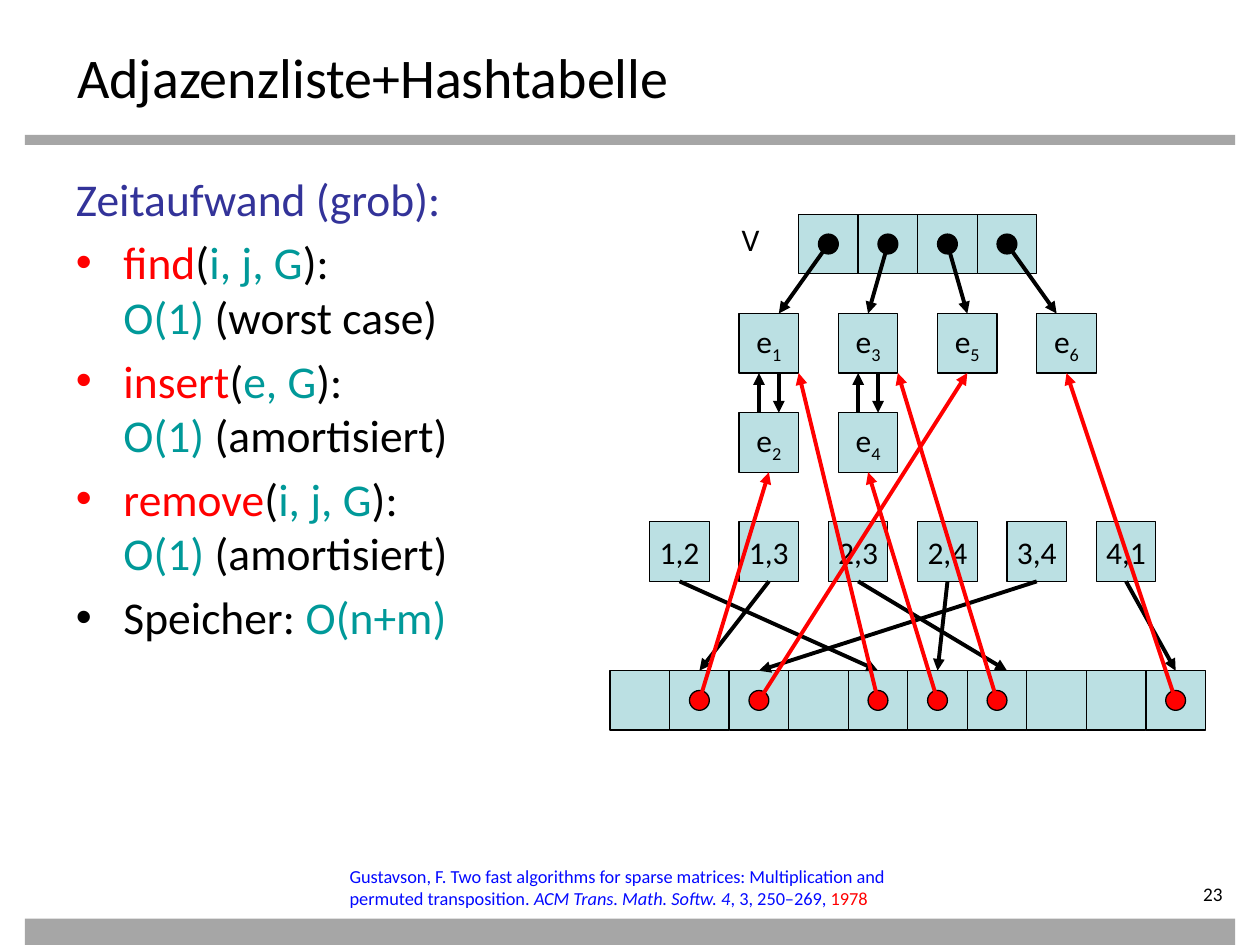
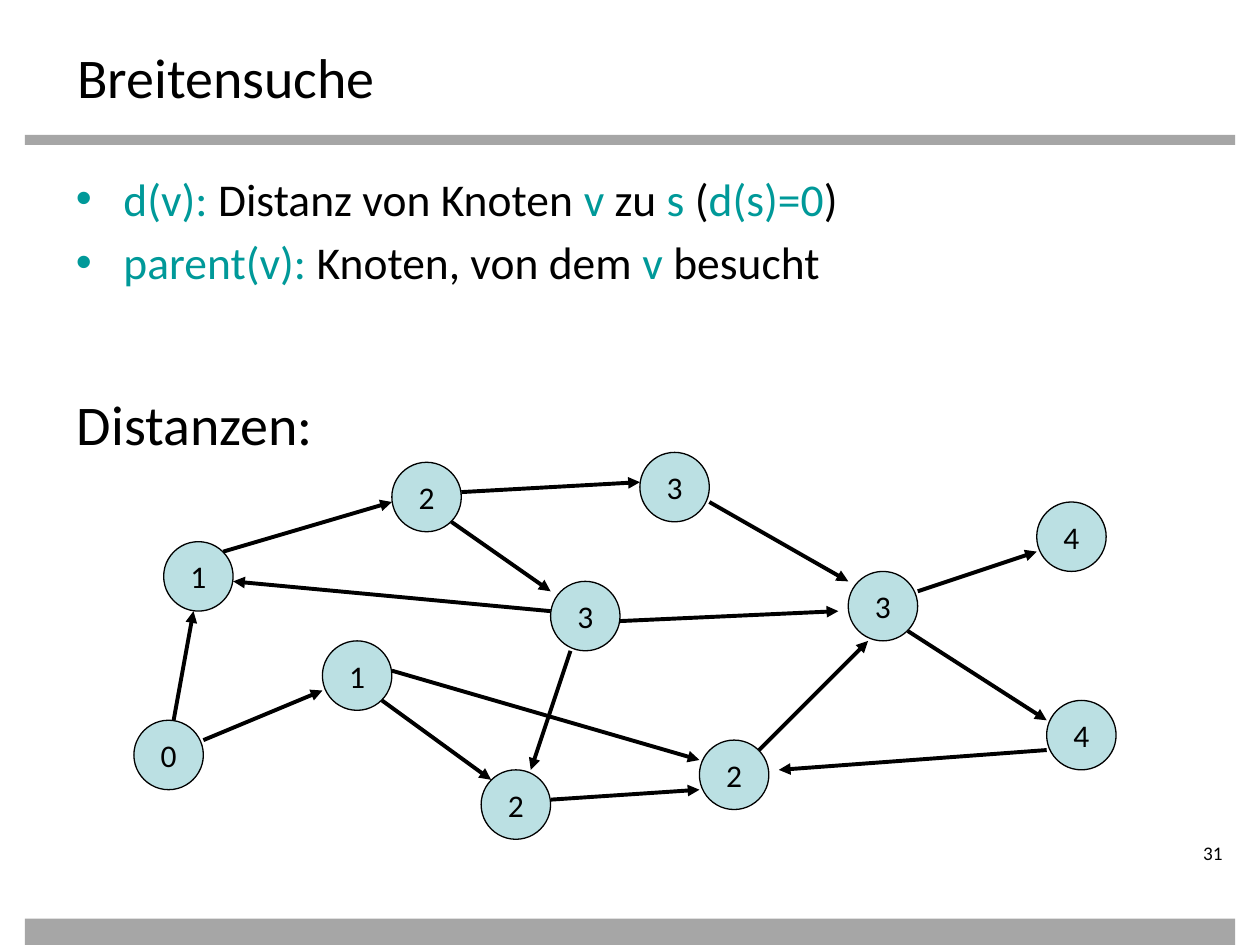
"""Build two lecture slides on graph storage and breadth-first search."""
from typing import NamedTuple, Optional, Sequence

from lxml import etree
from pptx import Presentation
from pptx import util as u
from pptx.dml.color import RGBColor
from pptx.enum import shapes, text
from pptx.oxml import ns

PX = 7200
FONT = "Calibri"
BLACK = RGBColor(0x00, 0x00, 0x00)
GREY = RGBColor(0xA6, 0xA6, 0xA6)
PALE = RGBColor(0xBB, 0xE0, 0xE3)
RED = RGBColor(0xFF, 0x00, 0x00)
TEAL = RGBColor(0x00, 0x99, 0x99)
NAVY = RGBColor(0x33, 0x33, 0x99)
BLUE = RGBColor(0x04, 0x09, 0xFF)

RECT = shapes.MSO_SHAPE.RECTANGLE
OVAL = shapes.MSO_SHAPE.OVAL
LEFT = text.PP_ALIGN.LEFT
MID = text.PP_ALIGN.CENTER
RIGHT = text.PP_ALIGN.RIGHT
TOP, BOTTOM = 0, 2

CELL, DOT, NODE, HANG = 60, 20, 70, 48


class Box(NamedTuple):
    x: int
    y: int
    w: int
    h: int

    def emu(self) -> list:
        return [u.Emu(v * PX) for v in self]


class Run(NamedTuple):
    text: str
    ink: Optional[RGBColor] = None
    italic: bool = False
    sub: bool = False


class Item(NamedTuple):
    runs: Sequence[Run]
    mark: bool = True


class Edge(NamedTuple):
    x1: int
    y1: int
    x2: int
    y2: int


class Key(NamedTuple):
    label: str
    slot: int
    shift: int = 0


class Link(NamedTuple):
    slot: int
    name: str
    corner: bool = False


class Vert(NamedTuple):
    label: str
    x: int
    y: int


BANDS = (Box(25, 136, 1220, 10), Box(25, 926, 1220, 27))
TITLE = Box(65, 36, 1143, 70)
BODY = Box(64, 166, 1143, 690)


def call(name: str, args: str, cost: str, note: str) -> Item:
    """Describe one operation with its running time."""
    return Item((Run(name, RED), Run("("), Run(args, TEAL), Run("):"),
                 Run("\n"), Run(cost + " ", TEAL), Run(f"({note})")))


COSTS = (
    Item((Run("Zeitaufwand (grob):", NAVY),), False),
    call("find", "i, j, G", "O(1)", "worst case"),
    call("insert", "e, G", "O(1)", "amortisiert"),
    call("remove", "i, j, G", "O(1)", "amortisiert"),
    Item((Run("Speicher:"), Run(" O(n+m)", TEAL))),
)
TERMS = (
    Item((Run("d(v):", TEAL), Run(" Distanz von Knoten "), Run("v", TEAL),
          Run(" zu "), Run("s ", TEAL), Run("("), Run("d(s)=0", TEAL),
          Run(")"))),
    Item((Run("parent(v):", TEAL), Run(" Knoten, von dem "),
          Run("v", TEAL), Run(" besucht"))),
)
CITE = (
    Run("Gustavson, F. Two fast algorithms for sparse matrices: "
        "Multiplication and permuted transposition. "),
    Run("ACM Trans. Math. Softw. 4", italic=True),
    Run(", 3, 250–269, "),
    Run("1978", RED),
)

LISTS = (("1", "2"), ("3", "4"), ("5",), ("6",))
HEADS = (785, 875, 975, 1065)
KEYS = (Key("1,2", 4), Key("1,3", 1), Key("2,3", 6, 10),
        Key("2,4", 5), Key("3,4", 2), Key("4,1", 9))
LINKS = (Link(1, "2"), Link(2, "5"), Link(4, "1", True),
         Link(5, "4"), Link(6, "3", True), Link(9, "6"))

VERTS = (
    Vert("0", 135, 726), Vert("1", 165, 546), Vert("1", 325, 646),
    Vert("2", 485, 776), Vert("3", 555, 586), Vert("2", 705, 746),
    Vert("2", 395, 466), Vert("3", 645, 456), Vert("3", 855, 576),
    Vert("4", 1045, 506), Vert("4", 1055, 706),
)
EDGES = (
    Edge(175, 726, 195, 616), Edge(205, 746, 325, 696),
    Edge(225, 556, 395, 506), Edge(385, 706, 495, 786),
    Edge(395, 676, 705, 766), Edge(555, 806, 705, 796),
    Edge(455, 526, 555, 596), Edge(465, 496, 645, 486),
    Edge(625, 626, 845, 616), Edge(765, 756, 875, 646),
    Edge(715, 506, 855, 586), Edge(575, 656, 535, 776),
    Edge(925, 596, 1045, 556), Edge(915, 636, 1055, 726),
    Edge(555, 616, 235, 586), Edge(1055, 756, 785, 776),
)


def fill(par, runs: Sequence[Run], size: float, ink=BLACK, align=LEFT) -> None:
    """Write runs into a paragraph and set its font."""
    for run in runs:
        if run.text == "\n":
            par.add_line_break()
            continue
        part = par.add_run()
        part.text = run.text
        if run.ink is not None:
            part.font.color.rgb = run.ink
        if run.italic:
            part.font.italic = True
        if run.sub:
            part._r.get_or_add_rPr().set("baseline", "-25000")
    par.alignment = align
    par.font.name = FONT
    par.font.size = u.Pt(size)
    par.font.color.rgb = ink


def label(slide, box: Box, runs: Sequence[Run], size: float,
          ink=BLACK, wrap: bool = False):
    """Add a text box with one paragraph."""
    frame = slide.shapes.add_textbox(*box.emu()).text_frame
    frame.word_wrap = wrap
    fill(frame.paragraphs[0], runs, size, ink)
    return frame


def block(slide, kind, box: Box, ink: RGBColor, runs: Sequence[Run] = (),
          edge: bool = True):
    """Add a filled preset shape with an optional centred text."""
    shape = slide.shapes.add_shape(kind, *box.emu())
    shape.shadow.inherit = False
    shape.fill.solid()
    shape.fill.fore_color.rgb = ink
    if edge:
        shape.line.color.rgb = BLACK
        shape.line.width = u.Pt(0.75)
    else:
        shape.line.fill.background()
    if runs:
        frame = shape.text_frame
        frame.word_wrap = False
        frame.vertical_anchor = text.MSO_ANCHOR.MIDDLE
        fill(frame.paragraphs[0], runs, 18, align=MID)
    return shape


def cell(slide, x: int, y: int, runs: Sequence[Run] = ()):
    """Add one square cell."""
    return block(slide, RECT, Box(x, y, CELL, CELL), PALE, runs)


def dot(slide, x: int, y: int, ink: RGBColor) -> None:
    """Add a dot in the middle of the cell at x, y."""
    gap = (CELL - DOT) // 2
    block(slide, OVAL, Box(x + gap, y + gap, DOT, DOT), ink)


def arrow(slide, edge: Edge, ink: RGBColor = BLACK):
    """Add a straight arrow."""
    line = slide.shapes.add_connector(
        shapes.MSO_CONNECTOR.STRAIGHT, *[u.Emu(v * PX) for v in edge])
    line.line.color.rgb = ink
    line.line.width = u.Pt(2.25)
    etree.SubElement(line.line._get_or_add_ln(), ns.qn("a:tailEnd"),
                     type="triangle")
    etree.SubElement(line._element.spPr, ns.qn("a:effectLst"))
    return line


def bullet(par, ink: RGBColor) -> None:
    """Give a paragraph a coloured round bullet."""
    props = par._p.get_or_add_pPr()
    tint = etree.SubElement(props, ns.qn("a:buClr"))
    etree.SubElement(tint, ns.qn("a:srgbClr"), val=str(ink))
    etree.SubElement(props, ns.qn("a:buFont"), typeface="Arial")
    etree.SubElement(props, ns.qn("a:buChar"), char="•")


def base(deck, title: str, items: Sequence[Item], page: str, low: int):
    """Add a slide with its title, bands, page number and body text."""
    slide = deck.slides.add_slide(deck.slide_layouts[5])
    for band in BANDS:
        block(slide, RECT, band, GREY, edge=False)
    head = slide.shapes.title
    head.left, head.top, head.width, head.height = TITLE.emu()
    frame = head.text_frame
    frame.auto_size = text.MSO_AUTO_SIZE.NONE
    frame.vertical_anchor = text.MSO_ANCHOR.TOP
    fill(frame.paragraphs[0], (Run(title),), 32)
    frame = label(slide, Box(1105, low, 140, 28), (Run(page),), 11, wrap=True)
    frame.margin_left = frame.margin_top = frame.margin_bottom = 0
    frame.paragraphs[0].alignment = RIGHT
    frame = slide.shapes.add_textbox(*BODY.emu()).text_frame
    frame.word_wrap = True
    for i, item in enumerate(items):
        par = frame.add_paragraph() if i else frame.paragraphs[0]
        props = par._p.get_or_add_pPr()
        props.set("marL", str(HANG * PX))
        props.set("indent", str(-HANG * PX))
        if item.mark:
            bullet(par, item.runs[0].ink or BLACK)
        if i:
            par.space_before = u.Pt(5.2)
        fill(par, item.runs, 26)
    return slide


def hashed(deck) -> None:
    """Draw the adjacency lists tied to a hash table."""
    slide = base(deck, "Adjazenzliste+Hashtabelle", COSTS, "23", 889)
    half, top, step, low, table = CELL // 2, 216, 100, 526, 676
    label(slide, Box(735, top, 47, 51), (Run("V"),), 18)
    elems = {}
    for i, (names, tip) in enumerate(zip(LISTS, HEADS)):
        vx, ex, ey = 805 + CELL * i, 745 + step * i, top + step
        cell(slide, vx, top)
        dot(slide, vx, top, BLACK)
        for j, name in enumerate(names):
            elems[name] = cell(slide, ex, ey + step * j,
                               (Run("e"), Run(name, sub=True)))
        line = arrow(slide, Edge(vx + half, top + half, tip, ey))
        if tip == ex + half:
            line.end_connect(elems[names[0]], TOP)
        if len(names) > 1:
            foot, next_y = ey + CELL, ey + step
            arrow(slide, Edge(ex + 40, foot, ex + 40, next_y))
            arrow(slide, Edge(ex + 20, next_y, ex + 20, foot))

    keys = [cell(slide, 655 + 90 * i, low, (Run(key.label),))
            for i, key in enumerate(KEYS)]
    left = [615 + CELL * i for i in range(10)]
    slots = [cell(slide, x, table) for x in left]
    for link in LINKS:
        dot(slide, left[link.slot], table, RED)
    for key, shape in zip(KEYS, keys):
        tip = left[key.slot] + half + key.shift
        line = arrow(slide, Edge(tip, low, tip, table))
        line.begin_connect(shape, BOTTOM)
        if not key.shift:
            line.end_connect(slots[key.slot], TOP)
    for link in LINKS:
        goal = elems[link.name]
        tip = (goal.left + goal.width) // PX
        foot = (goal.top + goal.height) // PX
        line = arrow(slide, Edge(left[link.slot] + half, table + half,
                                 tip, foot), RED)
        if not link.corner:
            line.end_connect(goal, BOTTOM)
    label(slide, Box(340, 866, 635, 60), CITE, 10.5, BLUE, True)


def search(deck) -> None:
    """Draw the graph with the distance of every vertex."""
    slide = base(deck, "Breitensuche", TERMS, "31", 848)
    label(slide, Box(65, 386, 292, 80), (Run("Distanzen:"),), 32)
    for vert in VERTS:
        block(slide, OVAL, Box(vert.x, vert.y, NODE, NODE), PALE,
              (Run(vert.label),))
    for edge in EDGES:
        arrow(slide, edge)


def main() -> None:
    """Build and save the deck."""
    deck = Presentation()
    deck.slide_width, deck.slide_height = u.Inches(10), u.Inches(7.5)
    hashed(deck)
    search(deck)
    deck.save("out.pptx")


if __name__ == "__main__":
    main()
